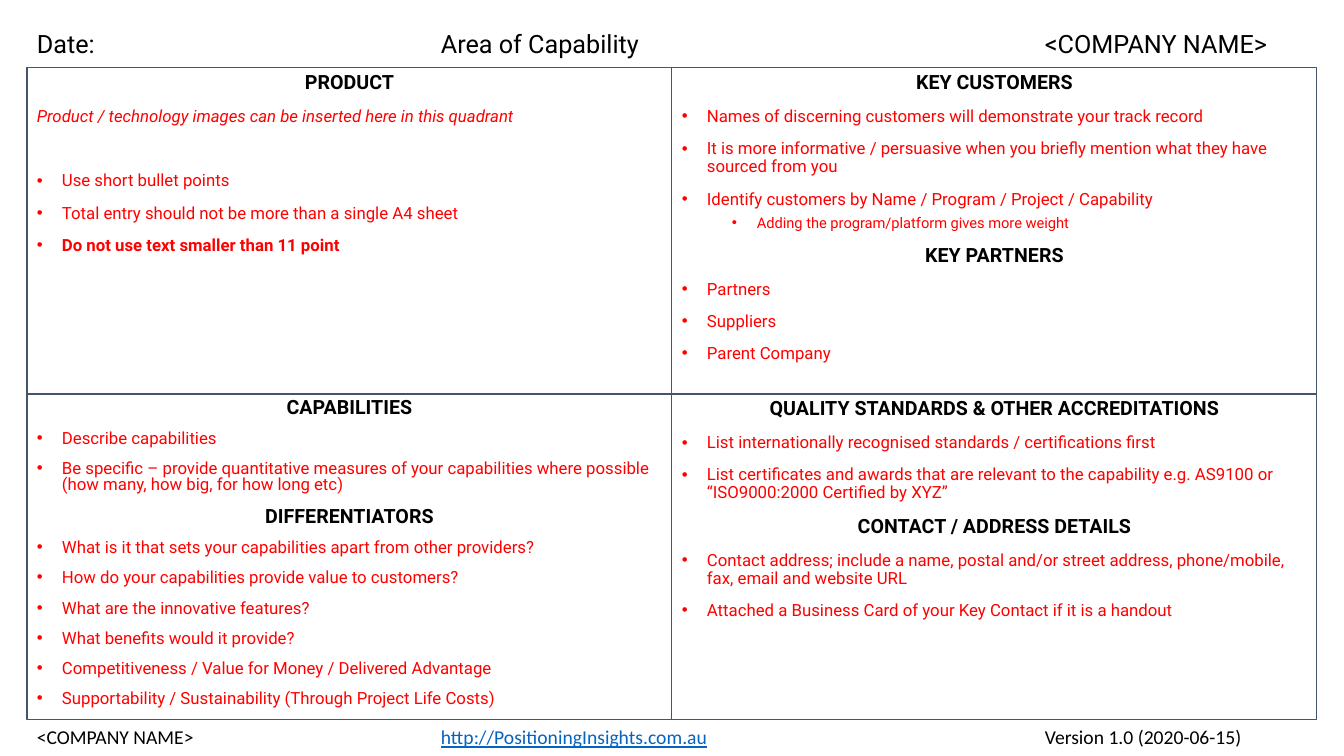
from lxml import etree
from pptx import Presentation
from pptx.dml.color import RGBColor
from pptx.enum.shapes import MSO_SHAPE
from pptx.enum.text import MSO_ANCHOR, PP_ALIGN
from pptx.oxml.ns import qn
from pptx.util import Pt

RECT = MSO_SHAPE.RECTANGLE
TOP = MSO_ANCHOR.TOP
LEFT, CENTER = PP_ALIGN.LEFT, PP_ALIGN.CENTER
PX = 914400 / 100.8
BLACK, RED, BLUE, SLATE = "000000", "FF0000", "0563C1", "44546A"


def px(n):
    return round(n * PX)


def rgb(code):
    return RGBColor.from_string(code)


deck = Presentation()
deck.slide_width, deck.slide_height = px(1344), px(756)
slide = deck.slides.add_slide(deck.slide_layouts[6])

styles = {
    "head": dict(size=14, color=BLACK, bold=True, gap=10, dent=None),
    "note": dict(size=12, color=RED, bold=False, gap=10, dent=None),
    "item": dict(size=12, color=RED, bold=False, gap=10, dent=25),
    "start": dict(size=12, color=RED, bold=False, gap=33, dent=25),
    "strong": dict(size=12, color=RED, bold=True, gap=10, dent=25),
    "sub": dict(size=10.5, color=RED, bold=False, gap=5, dent=75),
}

panels = [
    (0.9, [
        ("head", "PRODUCT"),
        ("note", "Product / technology images can be inserted here in this quadrant"),
        ("start", "Use short bullet points"),
        ("item", "Total entry should not be more than a single A4 sheet"),
        ("strong", "Do not use text smaller than 11 point"),
    ]),
    (0.9, [
        ("head", "KEY CUSTOMERS"),
        ("item", "Names of discerning customers will demonstrate your track record"),
        ("item", "It is more informative / persuasive when you briefly mention what they have sourced from you"),
        ("item", "Identify customers by Name / Program / Project / Capability"),
        ("sub", "Adding the program/platform gives more weight"),
        ("head", "KEY PARTNERS"),
        ("item", "Partners"),
        ("item", "Suppliers"),
        ("item", "Parent Company"),
    ]),
    (0.8, [
        ("head", "CAPABILITIES"),
        ("item", "Describe capabilities"),
        ("item", "Be specific – provide quantitative measures of your capabilities where possible (how many, how big, for how long etc)"),
        ("head", "DIFFERENTIATORS"),
        ("item", "What is it that sets your capabilities apart from other providers?"),
        ("item", "How do your capabilities provide value to customers?"),
        ("item", "What are the innovative features?"),
        ("item", "What benefits would it provide?"),
        ("item", "Competitiveness / Value for Money / Delivered Advantage"),
        ("item", "Supportability / Sustainability (Through Project Life Costs)"),
    ]),
    (0.9, [
        ("head", "QUALITY STANDARDS & OTHER ACCREDITATIONS"),
        ("item", "List internationally recognised standards / certifications first"),
        ("item", "List certificates and awards that are relevant to the capability e.g. AS9100 or “ISO9000:2000 Certified by XYZ”"),
        ("head", "CONTACT / ADDRESS DETAILS"),
        ("item", "Contact address; include a name, postal and/or street address, phone/mobile, fax, email and website URL"),
        ("item", "Attached a Business Card of your Key Contact if it is a handout"),
    ]),
]

for n, (pitch, lines) in enumerate(panels):
    row, col = divmod(n, 2)
    box = slide.shapes.add_shape(RECT, px(27 + 645 * col), px(68 + 326 * row), px(645), px(326))
    box.shadow.inherit = False
    box.fill.background()
    box.line.color.rgb = rgb(SLATE)
    box.line.width = Pt(0.75)
    frame = box.text_frame
    frame.word_wrap = True
    frame.vertical_anchor = TOP
    for i, (kind, text) in enumerate(lines):
        style = styles[kind]
        para = frame.add_paragraph() if i else frame.paragraphs[0]
        para.text = text
        para.alignment = CENTER if kind == "head" else LEFT
        para.level = 1 if kind == "sub" else 0
        para.line_spacing = pitch
        para.space_before = Pt(style["gap"] if i else 0)
        if style["dent"]:
            props = para._p.get_or_add_pPr()
            props.set("marL", str(px(style["dent"])))
            props.set("indent", str(px(-25)))
            etree.SubElement(props, qn("a:buFont")).set("typeface", "Arial")
            etree.SubElement(props, qn("a:buChar")).set("char", "•")
        font = para.font
        font.name = "Roboto"
        font.size = Pt(style["size"])
        font.bold = style["bold"]
        font.italic = kind == "note"
        font.color.rgb = rgb(style["color"])

bands = [
    (23, 40, "Roboto", 18, ["Date:", "Area of Capability", "<COMPANY NAME>"]),
    (720, 34, "Calibri", 14,
     ["<COMPANY NAME>", "http://PositioningInsights.com.au", "Version 1.0 (2020-06-15)"]),
]

for top, high, face, size, parts in bands:
    box = slide.shapes.add_textbox(px(27), px(top), px(1290), px(high))
    box.text_frame.word_wrap = True
    para = box.text_frame.paragraphs[0]
    tabs = etree.SubElement(para._p.get_or_add_pPr(), qn("a:tabLst"))
    for stop in (404, 1008):
        etree.SubElement(tabs, qn("a:tab"), pos=str(px(stop)), algn="l")
    para.font.name = face
    para.font.size = Pt(size)
    para.font.color.rgb = rgb(BLACK)
    for i, part in enumerate(parts):
        if i:
            para.add_run().text = "\t"
        run = para.add_run()
        run.text = part
        if part.startswith("http"):
            run.font.color.rgb = rgb(BLUE)
            run.font.underline = True

deck.save("out.pptx")
